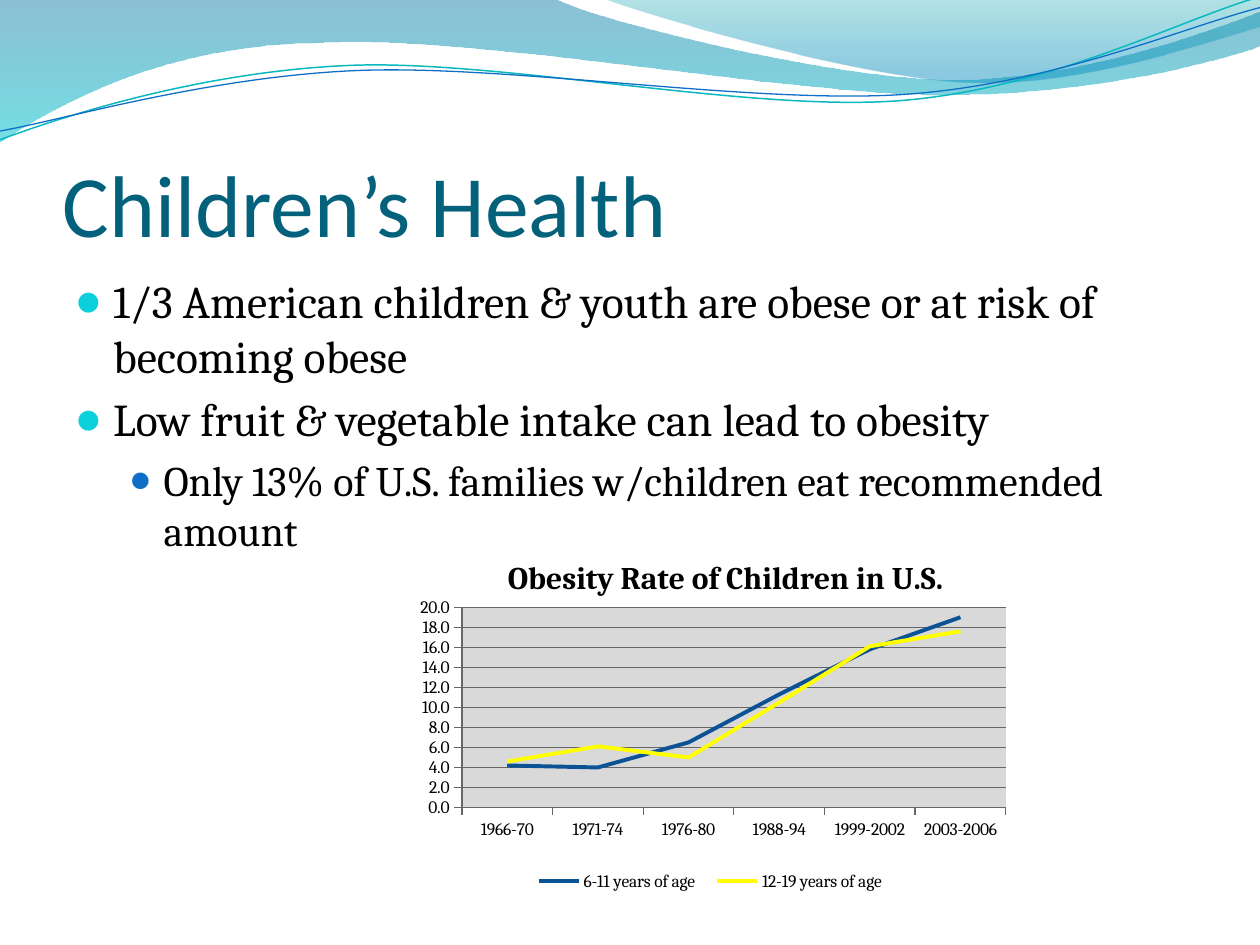
from math import cos, radians, sin
from lxml.etree import SubElement
from pptx import Presentation
from pptx.chart.data import CategoryChartData
from pptx.dml.color import RGBColor
from pptx.enum.chart import XL_CHART_TYPE, XL_LEGEND_POSITION, XL_MARKER_STYLE, XL_TICK_MARK
from pptx.enum.text import MSO_ANCHOR
from pptx.oxml import parse_xml
from pptx.oxml.ns import nsdecls, qn
from pptx.util import Inches, Pt

TITLE_BLUE = RGBColor(0x04, 0x61, 0x7B)
BLUE = RGBColor(0x0F, 0x6F, 0xC6)
TEAL = RGBColor(0x0A, 0xB8, 0xBF)
CYAN = RGBColor(0x0B, 0xD0, 0xD9)
SERIES_BLUE = RGBColor(0x0B, 0x53, 0x95)
YELLOW = RGBColor(0xFF, 0xFF, 0x00)
BLACK = RGBColor(0, 0, 0)
GRID_GRAY = RGBColor(0x66, 0x66, 0x66)
PLOT_GRAY = RGBColor(0xD9, 0xD9, 0xD9)

deck = Presentation()
deck.slide_width, deck.slide_height = Inches(10), Inches(7.5)
page = deck.slides.add_slide(deck.slide_layouts[6])


def add_wave(frame, start, segments, closed, turn=0):
    left, top, width, height = frame
    angle = radians(-turn)
    middle_x, middle_y = left + width / 2, top + height / 2
    builder = page.shapes.build_freeform(Inches(start[0]), Inches(start[1]), scale=1.0)
    builder.add_line_segments([(Inches(s[-1][0]), Inches(s[-1][1])) for s in segments], close=closed)
    wave = builder.convert_to_shape()
    wave.shadow.inherit = False
    wave.left, wave.top, wave.width, wave.height = (Inches(length) for length in frame)
    wave.rotation = turn
    outline = next(wave.element.iter(qn("a:pathLst")))[0]
    outline.set("w", str(Inches(width)))
    outline.set("h", str(Inches(height)))
    for command, points in zip(list(outline), [[start], *segments]):
        if len(points) == 3:
            command.tag = qn("a:cubicBezTo")
        for old in list(command):
            command.remove(old)
        for x, y in points:
            across, down = x - middle_x, y - middle_y
            local_x = across * cos(angle) - down * sin(angle) + width / 2
            local_y = across * sin(angle) + down * cos(angle) + height / 2
            SubElement(command, qn("a:pt"), x=str(Inches(local_x)), y=str(Inches(local_y)))
    return wave


def set_layout(element, x, y, w=None, h=None, inner=False):
    for old in element.findall(qn("c:layout")):
        element.remove(old)
    layout = parse_xml(f"<c:layout {nsdecls('c')}/>")
    manual = SubElement(layout, qn("c:manualLayout"))
    settings = [("layoutTarget", "inner")] if inner else []
    settings += [("xMode", "edge"), ("yMode", "edge"), ("x", x), ("y", y)]
    settings += [("w", w), ("h", h)] if w else []
    for name, value in settings:
        SubElement(manual, qn(f"c:{name}")).set("val", str(value))
    before = {"title": "tx", "legend": "legendPos"}.get(element.tag.split("}")[1])
    position = element.index(element.find(qn(f"c:{before}"))) + 1 if before else 0
    element.insert(position, layout)


bands = [
    ((-0.01, -0.01, 10.02, 1.14), (0, -0.01),
     [[(4.4, -0.01)],
      [(4.76, 0.17), (6.64, 0.63), (7.58, 0.63)],
      [(8.53, 0.63), (9.58, 0.26), (10, 0.09)],
      [(10.01, 0.36)],
      [(9.83, 0.44), (8.7, 0.76), (7.46, 0.75)],
      [(6.22, 0.75), (3.82, 0.28), (2.57, 0.34)],
      [(1.29, 0.35), (0.46, 0.83), (-0.01, 1.13)],
      [(0, -0.01)]],
     [(0, "0074A1", 45), (100, "00C6CF", 55)]),
    ((4.79, -0.01, 5.21, 0.7), (4.79, -0.01),
     [[(5.09, 0.11), (6.82, 0.62), (7.69, 0.65)],
      [(8.56, 0.69), (9.61, 0.32), (10, 0.21)],
      [(10, 0)],
      [(4.79, -0.01)]],
     [(0, "00A1A9", 30), (80, "008BBF", 45)]),
]
for frame, start, segments, stops in bands:
    band = add_wave(frame, start, segments, True)
    band.line.fill.background()
    gradient = parse_xml(f'<a:gradFill {nsdecls("a")}><a:gsLst/><a:lin ang="5400000" scaled="0"/></a:gradFill>')
    for position, color, opacity in stops:
        stop = SubElement(gradient[0], qn("a:gs"), pos=str(position * 1000))
        shade = SubElement(stop, qn("a:srgbClr"), val=color)
        SubElement(shade, qn("a:alpha"), val=str(opacity * 1000))
    properties = band.element.spPr
    properties.insert(properties.index(properties.find(qn("a:custGeom"))) + 1, gradient)

strands = [
    ((-0.02, 0.22, 10.02, 0.71), (0, 1.11),
     [[(0.48, 0.93), (1.58, 0.57), (2.77, 0.52)],
      [(3.95, 0.47), (5.93, 0.89), (7.13, 0.8)],
      [(8.33, 0.71), (9.38, 0.15), (9.98, -0.02)]], TEAL, 0.85),
    ((-0.02, 0.3, 10.03, 0.58), (0, 1.04),
     [[(0.47, 0.96), (1.64, 0.61), (2.83, 0.56)],
      [(4.03, 0.51), (5.97, 0.83), (7.17, 0.75)],
      [(8.36, 0.67), (9.41, 0.21), (10, 0.06)]], BLUE, 0.75),
]
for frame, start, segments, color, width in strands:
    strand = add_wave(frame, start, segments, False, turn=-2.7)
    strand.fill.background()
    strand.line.color.rgb = color
    strand.line.width = Pt(width)

title_box = page.shapes.add_textbox(Inches(0.5), Inches(0.77), Inches(9), Inches(1.25))
frame = title_box.text_frame
frame.word_wrap = True
frame.vertical_anchor = MSO_ANCHOR.BOTTOM
frame.margin_left = frame.margin_right = frame.margin_bottom = 0
frame.text = "Children’s Health"
font = frame.paragraphs[0].runs[0].font
font.name, font.size, font.color.rgb = "Calibri", Pt(50), TITLE_BLUE

body_box = page.shapes.add_textbox(Inches(0.5), Inches(2.12), Inches(9), Inches(4.8))
frame = body_box.text_frame
frame.word_wrap = True
bullets = [
    ("1/3 American children & youth are obese or at risk of becoming obese", 0),
    ("Low fruit & vegetable intake can lead to obesity", 0),
    ("Only 13% of U.S. families w/children eat recommended amount", 1),
]
levels = [(26, 0.3, 0.3, CYAN, 95), (24, 0.7, 0.27, BLUE, 85)]
frame.text = "\n".join(text for text, level in bullets)
for para, (text, level) in zip(frame.paragraphs, bullets):
    size, margin, hanging, color, bullet_size = levels[level]
    para.level = level
    para.space_before = Pt(size * 0.2)
    font = para.runs[0].font
    font.name, font.size, font.color.rgb = "Cambria", Pt(size), BLACK
    properties = para._p.get_or_add_pPr()
    properties.set("marL", str(Inches(margin)))
    properties.set("indent", str(-Inches(hanging)))
    SubElement(SubElement(properties, qn("a:buClr")), qn("a:srgbClr"), val=str(color))
    SubElement(properties, qn("a:buSzPct"), val=str(bullet_size * 1000))
    SubElement(properties, qn("a:buFont"), typeface="Calibri")
    SubElement(properties, qn("a:buChar"), char="●")

data = CategoryChartData(number_format="#,##0.0")
data.categories = ["1966-70", "1971-74", "1976-80", "1988-94", "1999-2002", "2003-2006"]
data.add_series("6-11 years of age", [4.2, 4, 6.5, 11.3, 15.8, 19])
data.add_series("12-19 years of age", [4.6, 6.1, 5, 10.5, 16.1, 17.6])
chart = page.shapes.add_chart(XL_CHART_TYPE.LINE, Inches(3.08), Inches(4.25),
                              Inches(5.33), Inches(3), data).chart
chart.font.name, chart.font.size, chart.font.color.rgb = "Cambria", Pt(10), BLACK

chart.has_title = True
chart.chart_title.text_frame.text = "Obesity Rate of Children in U.S."
font = chart.chart_title.text_frame.paragraphs[0].runs[0].font
font.name, font.size, font.bold, font.color.rgb = "Cambria", Pt(18), True, BLACK
chart.has_legend = True
chart.legend.position = XL_LEGEND_POSITION.RIGHT
chart.legend.include_in_layout = False

plot = chart.plots[0]
plot.vary_by_categories = False
for series, color in zip(plot.series, (SERIES_BLUE, YELLOW)):
    series.smooth = False
    series.marker.style = XL_MARKER_STYLE.NONE
    series.format.line.color.rgb = color
    series.format.line.width = Pt(2.25)

values = chart.value_axis
values.minimum_scale, values.maximum_scale, values.major_unit = 0, 20, 2
values.tick_labels.number_format = "#,##0.0"
values.tick_labels.number_format_is_linked = False
values.has_major_gridlines = True
for axis in (values, chart.category_axis):
    axis.major_tick_mark = XL_TICK_MARK.OUTSIDE
for ruled in (values, chart.category_axis, values.major_gridlines):
    ruled.format.line.color.rgb = GRID_GRAY
    ruled.format.line.width = Pt(0.75)

plot_area = chart.element.chart.plotArea
set_layout(plot_area, 0.11, 0.19, 0.81, 0.53, inner=True)
set_layout(chart.chart_title._element, 0.17, 0.04)
set_layout(chart.legend._element, 0.2, 0.87, 0.56, 0.09)
plot_area.append(parse_xml(f'<c:spPr {nsdecls("c", "a")}><a:solidFill><a:srgbClr val="{PLOT_GRAY}"/></a:solidFill></c:spPr>'))

deck.save("out.pptx")
